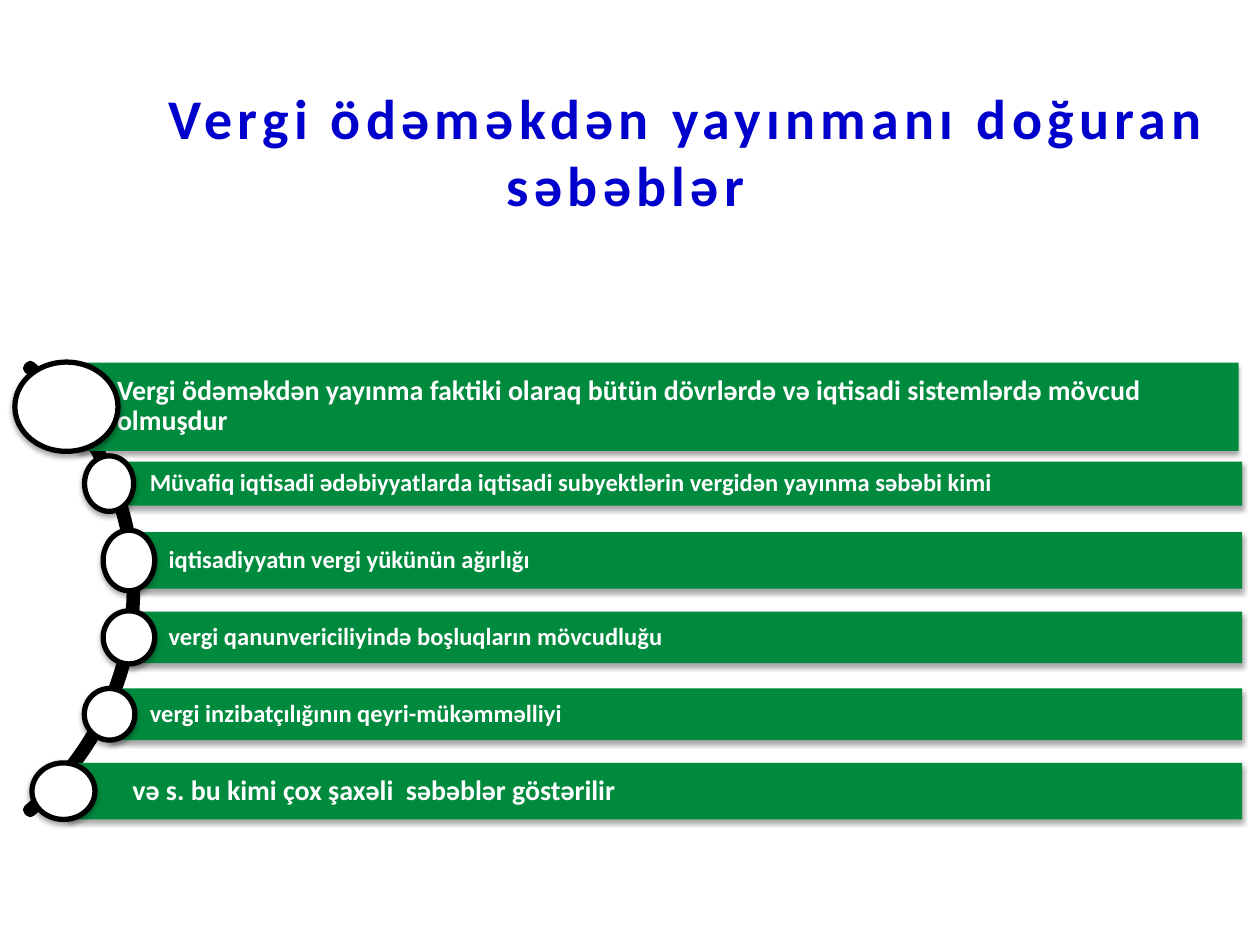
"""Build a slide listing the causes of tax evasion along a curved spine."""
from dataclasses import dataclass

from lxml import etree
from pptx import Presentation
from pptx.dml.color import RGBColor
from pptx.enum.shapes import MSO_SHAPE
from pptx.enum.text import MSO_ANCHOR, MSO_AUTO_SIZE, PP_ALIGN
from pptx.oxml.ns import qn
from pptx.util import Cm, Pt

ARC, BAR, KNOB = MSO_SHAPE.BLOCK_ARC, MSO_SHAPE.RECTANGLE, MSO_SHAPE.OVAL
TOP, MIDDLE = MSO_ANCHOR.TOP, MSO_ANCHOR.MIDDLE
LEFT, CENTER = PP_ALIGN.LEFT, PP_ALIGN.CENTER
NO_FIT = MSO_AUTO_SIZE.NONE
TITLE_ONLY = 5


@dataclass(frozen=True)
class Theme:
    font: str = "Calibri"
    title: RGBColor = RGBColor(0x00, 0x00, 0xCC)
    green: RGBColor = RGBColor(0x00, 0x8A, 0x3E)
    black: RGBColor = RGBColor(0x00, 0x00, 0x00)
    white: RGBColor = RGBColor(0xFF, 0xFF, 0xFF)
    title_size: int = 32
    large: int = 16
    small: int = 14
    spine_line: int = 6
    knob_line: int = 3


THEME = Theme()
TITLE = "Vergi ödəməkdən yayınmanı doğuran səbəblər"

CAUSES = [
    dict(text="Vergi ödəməkdən yayınma faktiki olaraq bütün dövrlərdə və "
              "iqtisadi sistemlərdə mövcud olmuşdur",
         size=THEME.large, left=1.55, right=24.97, height=1.78,
         knob=(1.34, 2.08, 1.8), inset=0.81),
    dict(text="Müvafiq iqtisadi ədəbiyyatlarda iqtisadi subyektlərin "
              "vergidən yayınma səbəbi kimi",
         size=THEME.small, left=2.21, right=25.04, height=0.89,
         knob=(2.2, 0.99, 1.12), inset=0.81),
    dict(text="iqtisadiyyatın vergi yükünün ağırlığı",
         size=THEME.small, left=2.59, right=25.04, height=1.14,
         knob=(2.6, 1.04, 1.22), inset=0.81),
    dict(text="vergi qanunvericiliyində boşluqların mövcudluğu",
         size=THEME.small, left=2.59, right=25.04, height=1.04,
         knob=(2.6, 1.04, 1.07), inset=0.81),
    dict(text="vergi inzibatçılığının qeyri-mükəmməlliyi",
         size=THEME.small, left=2.21, right=25.04, height=1.04,
         knob=(2.21, 1.02, 1.04), inset=0.81),
    dict(text="və s. bu kimi çox şaxəli  səbəblər göstərilir",
         size=THEME.large, left=1.35, right=25.04, height=1.14,
         knob=(1.28, 1.27, 1.14), inset=1.32),
]
FIRST_CENTER, PITCH = 8.2, 1.55


def add_span(para, text, size, color):
    span = para.add_run()
    span.text = text
    span.font.name = THEME.font
    span.font.size = Pt(size)
    span.font.bold = True
    span.font.color.rgb = color
    return span


def set_frame(frame, anchor, margins):
    frame.word_wrap = True
    frame.auto_size = NO_FIT
    frame.vertical_anchor = anchor
    (frame.margin_left, frame.margin_top,
     frame.margin_right, frame.margin_bottom) = map(Cm, margins)


def add_shape(page, kind, left, top, width, height):
    shape = page.shapes.add_shape(kind, Cm(left), Cm(top), Cm(width), Cm(height))
    shape.shadow.inherit = False
    return shape


def add_soft_shadow(shape):
    effects = shape._element.spPr.find(qn("a:effectLst"))
    shadow = etree.SubElement(
        effects, qn("a:outerShdw"), blurRad=str(Pt(3.1)), dist=str(Pt(1.8)),
        dir="5400000", rotWithShape="0")
    color = etree.SubElement(shadow, qn("a:srgbClr"), val=str(THEME.black))
    etree.SubElement(color, qn("a:alpha"), val="35000")


def set_outline(shape, width):
    shape.line.color.rgb = THEME.black
    shape.line.width = Pt(width)


def add_title(page):
    box = page.shapes.title
    box.left, box.top, box.width, box.height = map(Cm, (0.36, 1.68, 24.5, 2.74))
    set_frame(box.text_frame, TOP, (0, 0, 0, 0))
    para = box.text_frame.paragraphs[0]
    para.alignment = CENTER
    para._p.get_or_add_pPr().set("indent", str(Cm(2.54)))
    span = add_span(para, TITLE, THEME.title_size, THEME.title)
    span.font._element.set("spc", "300")


def add_spine(page):
    spine = add_shape(page, ARC, -10.49, 5.74, 13.21, 12.27)
    for index, value in enumerate((189, 27, 0.005)):
        spine.adjustments[index] = value
    spine.fill.background()
    set_outline(spine, THEME.spine_line)


def add_cause(page, cause, center):
    left, height = cause["left"], cause["height"]
    bar = add_shape(page, BAR, left, center - height / 2,
                    cause["right"] - left, height)
    bar.fill.solid()
    bar.fill.fore_color.rgb = THEME.green
    bar.line.fill.background()
    add_soft_shadow(bar)
    set_frame(bar.text_frame, MIDDLE, (cause["inset"], 0.1, 0.1, 0.1))
    para = bar.text_frame.paragraphs[0]
    para.alignment = LEFT
    para.line_spacing = 0.9
    add_span(para, cause["text"], cause["size"], THEME.white)

    middle, width, height = cause["knob"]
    knob = add_shape(page, KNOB, middle - width / 2, center - height / 2,
                     width, height)
    knob.fill.solid()
    knob.fill.fore_color.rgb = THEME.white
    set_outline(knob, THEME.knob_line)
    add_soft_shadow(knob)


def main():
    deck = Presentation()
    deck.slide_width, deck.slide_height = Cm(25.4), Cm(19.05)
    page = deck.slides.add_slide(deck.slide_layouts[TITLE_ONLY])
    add_title(page)
    add_spine(page)
    for row, cause in enumerate(CAUSES):
        add_cause(page, cause, FIRST_CENTER + row * PITCH)
    deck.save("out.pptx")


if __name__ == "__main__":
    main()
